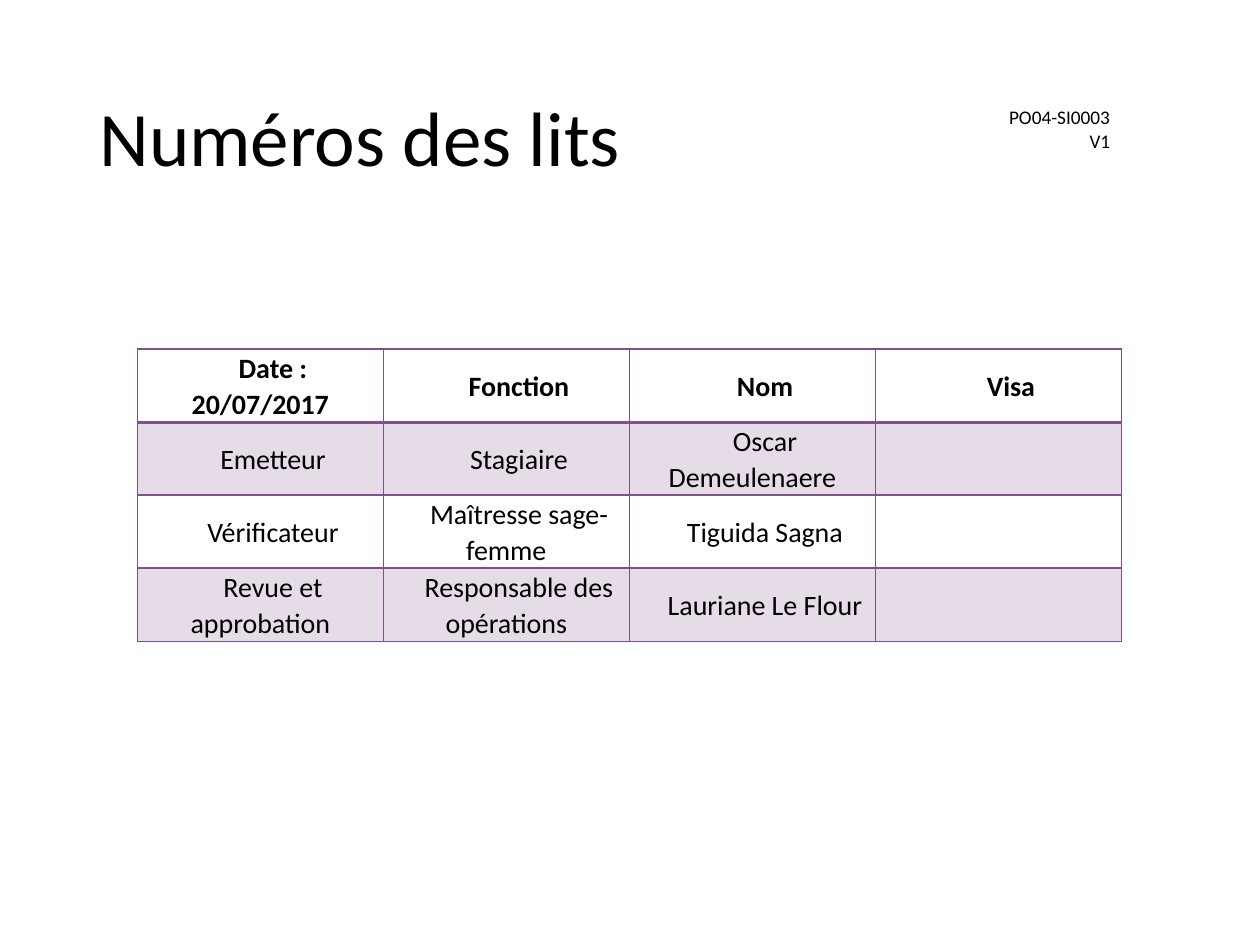
from pptx import Presentation
from pptx.dml.color import RGBColor
from pptx.enum.text import MSO_ANCHOR, PP_ALIGN
from pptx.oxml.ns import qn
from pptx.util import Inches, Pt
from lxml.etree import SubElement

BLACK = RGBColor(0x00, 0x00, 0x00)
PURPLE = RGBColor(0x7F, 0x50, 0x8B)

APPROVALS = [
    ["Date\u00a0: 20/07/2017", "Fonction", "Nom", "Visa"],
    ["Emetteur", "Stagiaire", "Oscar Demeulenaere", ""],
    ["Vérificateur", "Maîtresse sage-femme", "Tiguida Sagna", ""],
    ["Revue et approbation", "Responsable des opérations", "Lauriane Le Flour", ""],
]


def style(paragraph, size, align, bold=False):
    paragraph.alignment = align
    paragraph.font.name = "Calibri"
    paragraph.font.size = Pt(size)
    paragraph.font.bold = bold
    paragraph.font.color.rgb = BLACK


def add_border(cell, side, width):
    line = SubElement(cell._tc.get_or_add_tcPr(), qn(f"a:ln{side}"), w=str(Pt(width)))
    color = SubElement(SubElement(line, qn("a:solidFill")), qn("a:srgbClr"))
    color.set("val", str(PURPLE))


prs = Presentation()
prs.slide_width = Inches(10)
prs.slide_height = Inches(7.5)
slide = prs.slides.add_slide(prs.slide_layouts[6])

title = slide.shapes.add_textbox(Inches(0.69), Inches(0.4), Inches(8.62), Inches(1.45)).text_frame
title.word_wrap = True
title.vertical_anchor = MSO_ANCHOR.MIDDLE
title.text = "Numéros des lits"
title.paragraphs[0].line_spacing = 0.9
style(title.paragraphs[0], 44, PP_ALIGN.LEFT)

approval_table = slide.shapes.add_table(
    len(APPROVALS), len(APPROVALS[0]), Inches(1.09), Inches(2.77), Inches(7.81), Inches(2.32)
).table
approval_table.first_row = False
approval_table.horz_banding = False

for row, entries in enumerate(APPROVALS):
    for col, entry in enumerate(entries):
        cell = approval_table.cell(row, col)
        cell.text = entry
        cell.vertical_anchor = MSO_ANCHOR.MIDDLE
        cell.margin_left = cell.margin_right = Inches(0.07)
        cell.margin_top = cell.margin_bottom = 0
        paragraph = cell.text_frame.paragraphs[0]
        style(paragraph, 16, PP_ALIGN.CENTER, bold=row == 0)
        paragraph.line_spacing = 1.07
        paragraph.space_before = paragraph.space_after = Pt(6)
        paragraph._p.get_or_add_pPr().set("indent", str(Inches(0.2)))
        for side in "LRTB":
            header_edge = (row, side) in [(0, "B"), (1, "T")]
            add_border(cell, side, 2 if header_edge else 1)
        if row % 2:
            cell.fill.solid()
            cell.fill.fore_color.rgb = PURPLE
            tint = cell._tc.tcPr.find(qn("a:solidFill")).find(qn("a:srgbClr"))
            SubElement(tint, qn("a:alpha"), val="20000")
        else:
            cell.fill.background()

reference = slide.shapes.add_textbox(Inches(7.01), Inches(0.79), Inches(1.9), Inches(0.47)).text_frame
reference.word_wrap = True
reference.text = "PO04-SI0003\nV1"
for paragraph in reference.paragraphs:
    style(paragraph, 11, PP_ALIGN.RIGHT)

prs.save("out.pptx")
